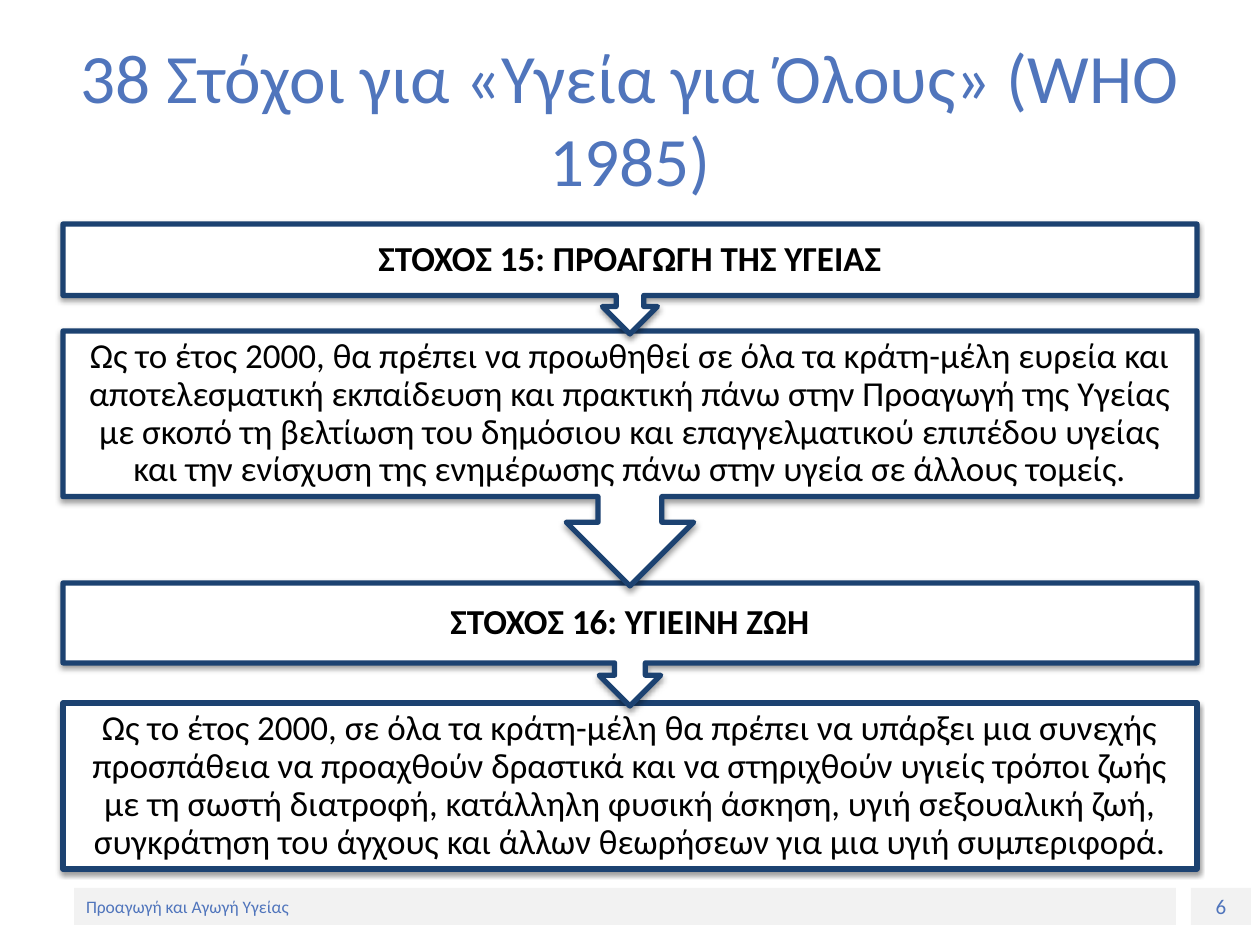
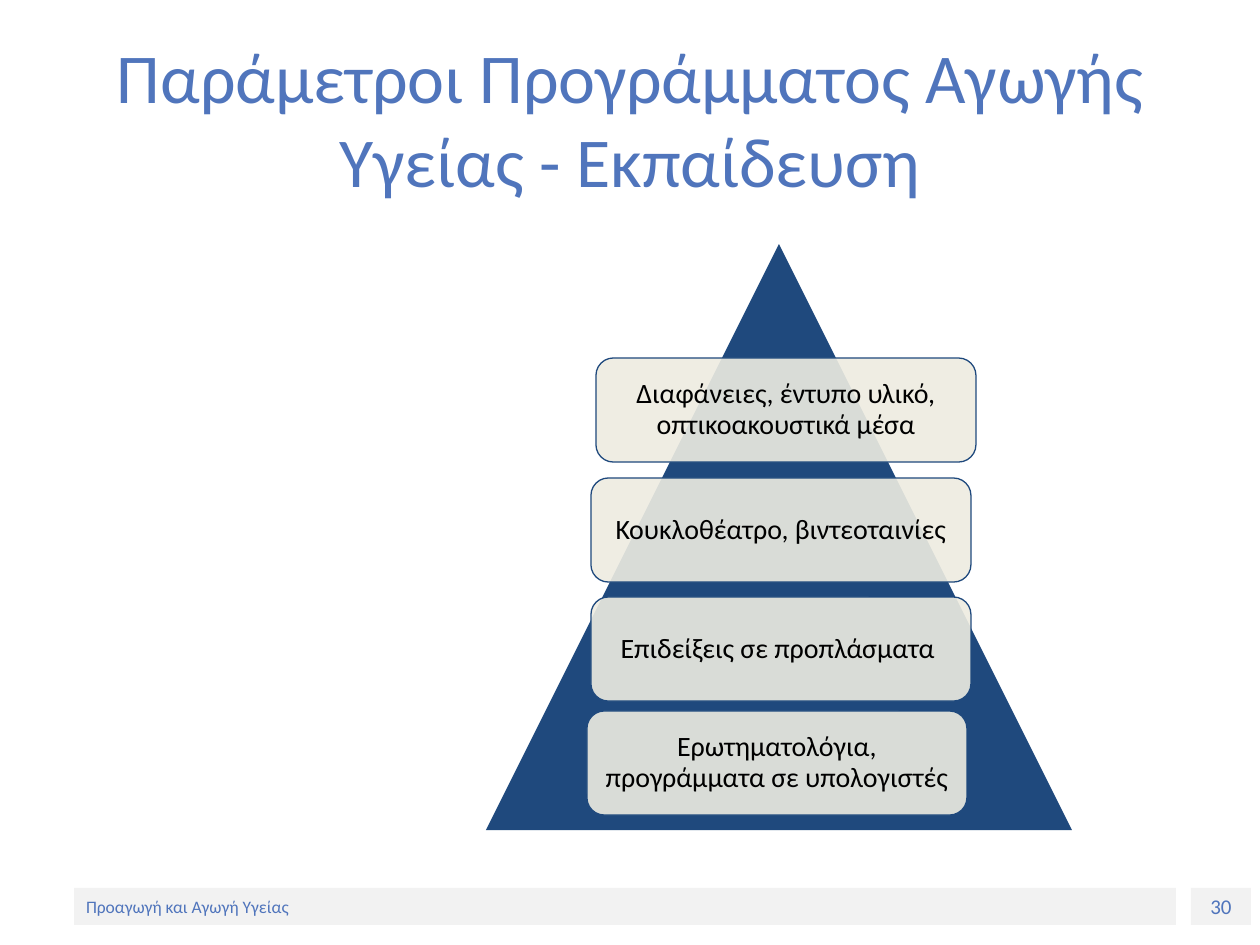
"""Build two health promotion slides: a flow of goals and a pyramid of teaching aids."""
from dataclasses import dataclass

from lxml.etree import SubElement
from pptx import Presentation
from pptx.dml.color import RGBColor
from pptx.enum.shapes import MSO_SHAPE
from pptx.enum.text import MSO_ANCHOR, PP_ALIGN
from pptx.oxml.ns import qn
from pptx.util import Emu, Pt


@dataclass(frozen=True)
class Theme:
    font: str = "Calibri"
    heading: str = "5075BC"
    body: str = "000000"
    band: str = "F2F2F2"
    paper: str = "FFFFFF"
    outline: str = "1C4271"
    navy: str = "1F497D"
    cream: str = "EEECE1"
    goal_size: int = 20
    aid_size: int = 16
    number_size: int = 12
    footer_size: int = 10


theme = Theme()
EMU_PER_PX = 914400 / 126


def add_box(page, kind, bounds, fill=None, line=None, line_width=0):
    box = page.shapes.add_shape(kind, *(Emu(round(px * EMU_PER_PX)) for px in bounds))
    box.shadow.inherit = False
    if fill:
        box.fill.solid()
        box.fill.fore_color.rgb = RGBColor.from_string(fill)
    else:
        box.fill.background()
    if line:
        box.line.color.rgb = RGBColor.from_string(line)
        box.line.width = Pt(line_width)
    else:
        box.line.fill.background()
    return box


def write(box, text, size, colour, bold=False, align=PP_ALIGN.CENTER, inset=(12, 6), spacing=1.0):
    frame = box.text_frame
    frame.word_wrap = True
    frame.vertical_anchor = MSO_ANCHOR.MIDDLE
    frame.margin_left = frame.margin_right = Emu(round(inset[0] * EMU_PER_PX))
    frame.margin_top = frame.margin_bottom = Emu(round(inset[1] * EMU_PER_PX))
    para = frame.paragraphs[0]
    para.text = text
    para.alignment = align
    para.line_spacing = spacing
    para.font.name = theme.font
    para.font.size = Pt(size)
    para.font.bold = bold
    para.font.color.rgb = RGBColor.from_string(colour)


deck = Presentation()
deck.slide_width = Emu(round(1260 * EMU_PER_PX))
deck.slide_height = Emu(round(945 * EMU_PER_PX))

titles = [
    ("38 Στόχοι για «Υγεία για Όλους» (WHO 1985)", 39.6, "6"),
    ("Παράμετροι Προγράμματος Αγωγής Υγείας - Εκπαίδευση", 40, "30"),
]
pages = []
for title, title_size, number in titles:
    page = deck.slides.add_slide(deck.slide_layouts[6])
    number_band = add_box(page, MSO_SHAPE.RECTANGLE, (1191, 888, 60, 37), theme.band)
    write(number_band, number, theme.number_size, theme.heading)
    footer_band = add_box(page, MSO_SHAPE.RECTANGLE, (74, 888, 1102, 37), theme.band)
    write(footer_band, "Προαγωγή και Αγωγή Υγείας", theme.footer_size, theme.heading, align=PP_ALIGN.LEFT)
    title_box = add_box(page, MSO_SHAPE.RECTANGLE, (63, 38, 1134, 158))
    write(title_box, title, title_size, theme.heading)
    pages.append(page)
goals_page, aids_page = pages

goals = [
    (224, 110, True, "ΣΤΟΧΟΣ 15: ΠΡΟΑΓΩΓΗ ΤΗΣ ΥΓΕΙΑΣ"),
    (331, 255, False, "Ως το έτος 2000, θα πρέπει να προωθηθεί σε όλα τα κράτη-μέλη ευρεία και "
     "αποτελεσματική εκπαίδευση και πρακτική πάνω στην Προαγωγή της Υγείας με σκοπό τη βελτίωση "
     "του δημόσιου και επαγγελματικού επιπέδου υγείας και την ενίσχυση της ενημέρωσης πάνω στην "
     "υγεία σε άλλους τομείς."),
    (583, 123, True, "ΣΤΟΧΟΣ 16: ΥΓΙΕΙΝΗ ΖΩΗ"),
    (703, 166, False, "Ως το έτος 2000, σε όλα τα κράτη-μέλη θα πρέπει να υπάρξει μια συνεχής "
     "προσπάθεια να προαχθούν δραστικά και να στηριχθούν υγιείς τρόποι ζωής με τη σωστή διατροφή, "
     "κατάλληλη φυσική άσκηση, υγιή σεξουαλική ζωή, συγκράτηση του άγχους και άλλων θεωρήσεων για "
     "μια υγιή συμπεριφορά."),
]
for goal in reversed(goals):
    top, height, is_heading, text = goal
    kind = MSO_SHAPE.RECTANGLE if goal is goals[-1] else MSO_SHAPE.DOWN_ARROW_CALLOUT
    goal_box = add_box(goals_page, kind, (63, top, 1134, height), theme.paper, theme.outline, 3)
    write(goal_box, text, theme.goal_size, theme.body, is_heading, inset=(20, 0), spacing=0.9)
    effects = goal_box.element.spPr.find(qn("a:effectLst"))
    shadow = SubElement(effects, qn("a:outerShdw"), blurRad=str(Pt(3.1)), dist=str(Pt(1.6)),
                        dir="5400000", rotWithShape="0")
    shade = SubElement(shadow, qn("a:srgbClr"), val=theme.body)
    SubElement(shade, qn("a:alpha"), val="38000")

add_box(aids_page, MSO_SHAPE.ISOSCELES_TRIANGLE, (486, 244, 586, 586), theme.navy)
aids = [
    (596, 358, "Διαφάνειες, έντυπο υλικό, οπτικοακουστικά μέσα"),
    (591, 478, "Κουκλοθέατρο, βιντεοταινίες"),
    (591, 597, "Επιδείξεις σε προπλάσματα "),
    (587, 711, "Ερωτηματολόγια, προγράμματα σε υπολογιστές"),
]
for left, top, text in aids:
    aid_box = add_box(aids_page, MSO_SHAPE.ROUNDED_RECTANGLE, (left, top, 380, 104),
                      theme.cream, theme.navy, 0.75)
    write(aid_box, text, theme.aid_size, theme.body, inset=(9, 9), spacing=0.9)
    fill_colour = aid_box.element.spPr.find(qn("a:solidFill")).find(qn("a:srgbClr"))
    SubElement(fill_colour, qn("a:alpha"), val="90000")

deck.save("out.pptx")
